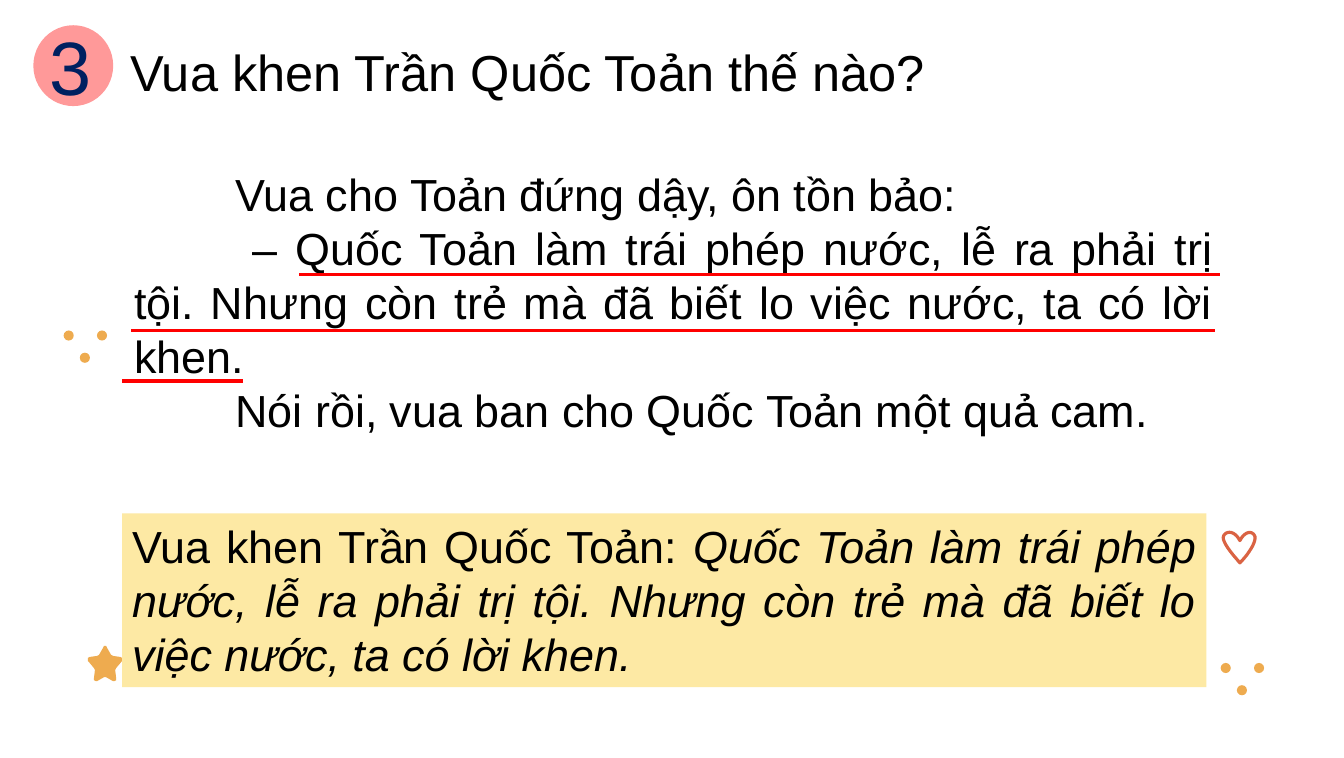
from lxml.etree import SubElement
from pptx import Presentation
from pptx.dml.color import RGBColor
from pptx.enum.shapes import MSO_CONNECTOR, MSO_SHAPE
from pptx.enum.text import MSO_ANCHOR, PP_ALIGN
from pptx.oxml.ns import qn
from pptx.util import Pt

PX = 9144  # EMU in one px, 100 px to the inch
FINE = 10  # outline steps in one px
ORANGE, RED, CORAL = "EEAB4F", "FF0000", "DA6343"

STAR_LEFT = [(18, 0), (17, 0), (16, 2), (12, 9), (10, 10), (3, 11), (1, 12), (1, 15),
             (2, 16), (7, 22), (8, 24), (7, 32), (7, 34), (9, 35), (10, 35), (17, 31)]
HEART_CURVES = [((19, 32), (12, 24), (0, 10), (3, 5)),
                ((3, 5), (6, 0), (14, 0), (19, 10)),
                ((19, 10), (24, 0), (32, 0), (34, 6)),
                ((34, 6), (35, 12), (27, 24), (19, 32))]

QUESTION = "Vua khen Trần Quốc Toản thế nào?"
SPEECH = ("Quốc Toản làm trái phép nước, lễ ra phải trị tội. "
          "Nhưng còn trẻ mà đã biết lo việc nước, ta có lời khen.")
STORY = [("Vua cho Toản đứng dậy, ôn tồn bảo:", 100),
         ("– " + SPEECH, 117),
         ("Nói rồi, vua ban cho Quốc Toản một quả cam.", 100)]


def rgb(value):
    return RGBColor.from_string(value)


def emu(*lengths):
    return [n * PX for n in lengths]


def paint(sp, fill):
    sp.shadow.inherit = False
    sp.fill.solid()
    sp.fill.fore_color.rgb = rgb(fill)
    sp.line.fill.background()


def add_text(s, box, paragraphs, size, color="000000", inset=None):
    """Justified text; each paragraph is (list of (words, italic), first-line indent)."""
    sp = s.shapes.add_textbox(*emu(*box))
    tf = sp.text_frame
    tf.word_wrap = True
    if inset is not None:
        tf.vertical_anchor = MSO_ANCHOR.MIDDLE
        tf.margin_left = tf.margin_right = tf.margin_top = tf.margin_bottom = inset * PX
    for i, (runs, indent) in enumerate(paragraphs):
        p = tf.add_paragraph() if i else tf.paragraphs[0]
        p.alignment = PP_ALIGN.JUSTIFY
        if indent:
            p._p.get_or_add_pPr().set("indent", str(indent * PX))
        for words, italic in runs:
            r = p.add_run()
            r.text = words
            r.font.name, r.font.size = "Arial", Pt(size)
            r.font.italic = italic
            r.font.color.rgb = rgb(color)
    return sp


def add_outline(s, x, y, points):
    """Closed freeform from points relative to (x, y)."""
    placed = [((x + px) * FINE, (y + py) * FINE) for px, py in points]
    fb = s.shapes.build_freeform(*placed[0], scale=PX / FINE)
    fb.add_line_segments(placed[1:], close=True)
    sp = fb.convert_to_shape()
    paint(sp, ORANGE)
    return sp


def add_dots(s, x, y):
    for dx, dy in [(0, 0), (33, 0), (16, 22)]:
        paint(s.shapes.add_shape(MSO_SHAPE.OVAL, *emu(x + dx, y + dy, 10, 10)), ORANGE)


def add_star(s, x, y):
    right = [(36 - px, py) for px, py in reversed(STAR_LEFT)]
    add_outline(s, x, y, STAR_LEFT + right)


def bezier(a, b, c, d, steps=10):
    for i in range(steps):
        t = i / steps
        u = 1 - t
        yield tuple(u**3 * k + 3 * u * u * t * m + 3 * u * t * t * n + t**3 * o
                    for k, m, n, o in zip(a, b, c, d))


def add_heart(s, x, y):
    sp = add_outline(s, x, y, [pt for curve in HEART_CURVES for pt in bezier(*curve)])
    sp.fill.background()
    sp.line.color.rgb = rgb(CORAL)
    sp.line.width = Pt(2.25)


def add_question(s, x, y, w, h):
    paint(s.shapes.add_shape(MSO_SHAPE.OVAL, *emu(x, y, 79, h)), "FF9999")
    add_text(s, (x + 3, y + 14, 80, 52), [([("3", False)], 0)], 53.9, "002060", inset=13)
    add_text(s, (x + 86, y + 11, w - 86, 71), [([(QUESTION, False)], 0)], 36)


def add_story(s, x, y, w, h):
    add_text(s, (x, y, w, h), [([(words, False)], indent) for words, indent in STORY], 32)
    for left, right, down in [(173, 1084, 112), (7, 1079, 167), (-2, 117, 217)]:
        ln = s.shapes.add_connector(MSO_CONNECTOR.STRAIGHT,
                                    *emu(x + left, y + down, x + right, y + down))
        ln.line.color.rgb = rgb(RED)
        ln.line.width = Pt(2.25)
        SubElement(ln._element.spPr, qn("a:effectLst"))


def add_answer(s, x, y, w, h):
    runs = [("Vua khen Trần Quốc Toản: ", False), (SPEECH, True)]
    paint(add_text(s, (x, y, w, h), [(runs, 0)], 32), "FDE9A4")


def main():
    prs = Presentation()
    prs.slide_width, prs.slide_height = emu(1330, 750)
    s = prs.slides.add_slide(prs.slide_layouts[6])
    add_dots(s, 63, 327)
    add_dots(s, 1208, 656)
    add_star(s, 86, 639)
    add_heart(s, 1208, 525)
    add_question(s, 33, 25, 1264, 80)
    add_story(s, 123, 160, 1088, 279)
    add_answer(s, 121, 508, 1073, 172)
    prs.save("out.pptx")


if __name__ == "__main__":
    main()
